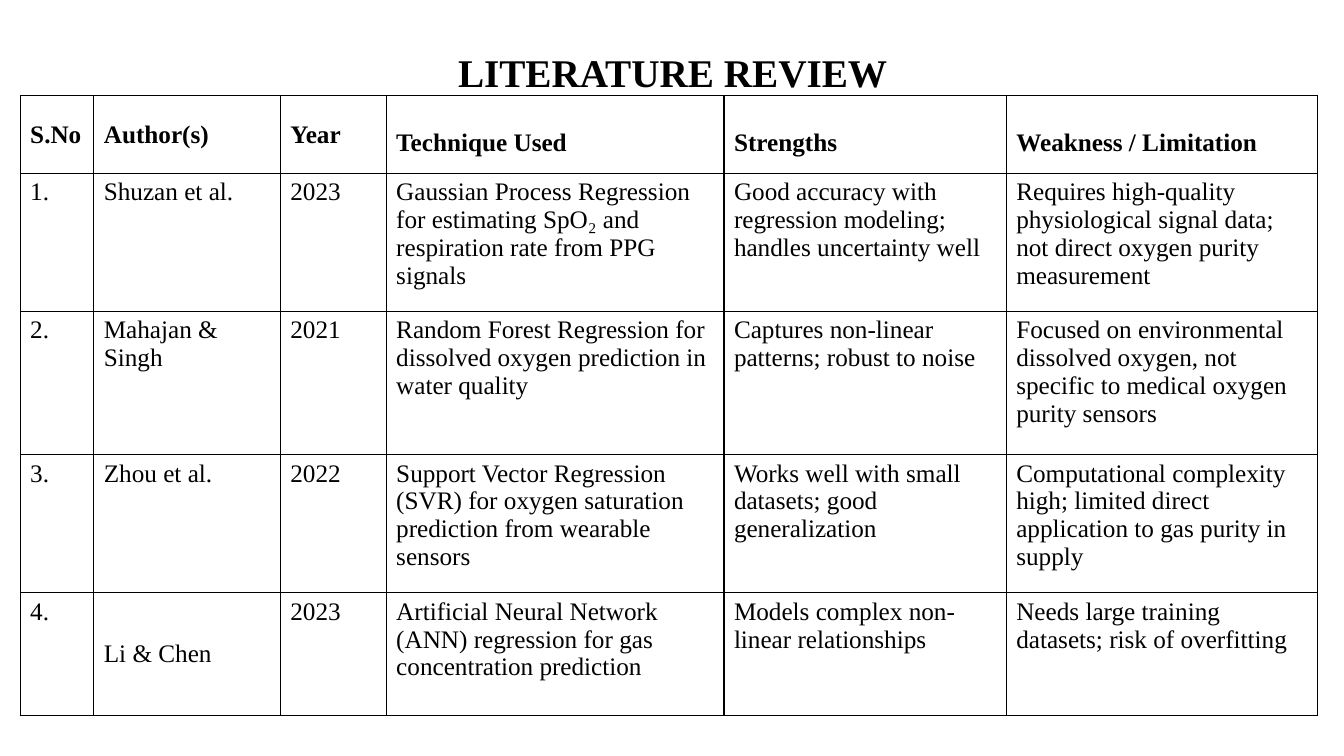
from dataclasses import astuple, dataclass

from lxml.etree import SubElement
from pptx import Presentation
from pptx.dml.color import RGBColor
from pptx.enum.text import MSO_ANCHOR as Anchor, PP_ALIGN as Align
from pptx.oxml.ns import qn
from pptx.slide import Slide
from pptx.table import _Cell as Cell
from pptx.text.text import _Paragraph as Paragraph
from pptx.util import Inches, Pt

BLACK = RGBColor(0x00, 0x00, 0x00)
FONT = "Times New Roman"
COLUMN_WIDTHS = (0.73, 1.85, 1.05, 3.35, 2.8, 3.09)
ROW_HEIGHTS = (0.77, 1.37, 1.42, 1.37, 1.22)
MIDDLE_CELLS = {(0, 0), (0, 1), (0, 2), (4, 1)}


@dataclass(frozen=True)
class Study:
    number: str
    authors: str
    year: str
    technique: str
    strengths: str
    weakness: str


STUDIES = (
    Study("S.No", "Author(s)", "Year", "Technique Used", "Strengths", "Weakness / Limitation"),
    Study(
        "1.", "Shuzan et al.", "2023",
        "Gaussian Process Regression for estimating SpO₂ and respiration rate from PPG signals",
        "Good accuracy with regression modeling; handles uncertainty well",
        "Requires high-quality physiological signal data; not direct oxygen purity measurement",
    ),
    Study(
        "2.", "Mahajan & Singh", "2021",
        "Random Forest Regression for dissolved oxygen prediction in water quality",
        "Captures non-linear patterns; robust to noise",
        "Focused on environmental dissolved oxygen, not specific to medical oxygen purity sensors",
    ),
    Study(
        "3.", "Zhou et al.", "2022",
        "Support Vector Regression (SVR) for oxygen saturation prediction from wearable sensors",
        "Works well with small datasets; good generalization",
        "Computational complexity high; limited direct application to gas purity in supply",
    ),
    Study(
        "4.", "Li & Chen", "2023",
        "Artificial Neural Network (ANN) regression for gas concentration prediction",
        "Models complex non-linear relationships",
        "Needs large training datasets; risk of overfitting",
    ),
)


def style_text(paragraph: Paragraph, size: int, bold: bool) -> None:
    for run in paragraph.runs:
        run.font.name = FONT
        run.font.size = Pt(size)
        run.font.bold = bold
        run.font.color.rgb = BLACK


def add_borders(cell: Cell) -> None:
    properties = cell._tc.get_or_add_tcPr()
    for side in ("L", "R", "T", "B"):
        line = SubElement(properties, qn(f"a:ln{side}"), w=str(Pt(1)))
        fill = SubElement(line, qn("a:solidFill"))
        SubElement(fill, qn("a:srgbClr"), val=str(BLACK))


def add_title(slide: Slide) -> None:
    title = slide.shapes.add_textbox(Inches(0.92), Inches(0.4), Inches(11.5), Inches(0.69))
    frame = title.text_frame
    frame.word_wrap = True
    frame.vertical_anchor = Anchor.MIDDLE
    frame.text = "LITERATURE REVIEW"
    paragraph = frame.paragraphs[0]
    paragraph.alignment = Align.CENTER
    paragraph.line_spacing = 0.9
    style_text(paragraph, 28, True)


def add_review_table(slide: Slide) -> None:
    table = slide.shapes.add_table(
        len(ROW_HEIGHTS), len(COLUMN_WIDTHS),
        Inches(0.2), Inches(0.95), Inches(sum(COLUMN_WIDTHS)), Inches(sum(ROW_HEIGHTS)),
    ).table
    table.first_row = False
    table.horz_banding = False
    for column, width in zip(table.columns, COLUMN_WIDTHS):
        column.width = Inches(width)
    for row, height in zip(table.rows, ROW_HEIGHTS):
        row.height = Inches(height)
    for row_index, study in enumerate(STUDIES):
        is_header = row_index == 0
        for column_index, text in enumerate(astuple(study)):
            cell = table.cell(row_index, column_index)
            cell.text_frame.text = text
            style_text(cell.text_frame.paragraphs[0], 18, is_header)
            add_borders(cell)
            cell.fill.background()
            if (row_index, column_index) in MIDDLE_CELLS:
                cell.vertical_anchor = Anchor.MIDDLE
            elif is_header:
                cell.margin_top = Inches(0.33)


def main() -> None:
    presentation = Presentation()
    presentation.slide_width = Inches(13.33)
    presentation.slide_height = Inches(7.5)
    slide = presentation.slides.add_slide(presentation.slide_layouts[6])
    add_title(slide)
    add_review_table(slide)
    presentation.save("out.pptx")


if __name__ == "__main__":
    main()
